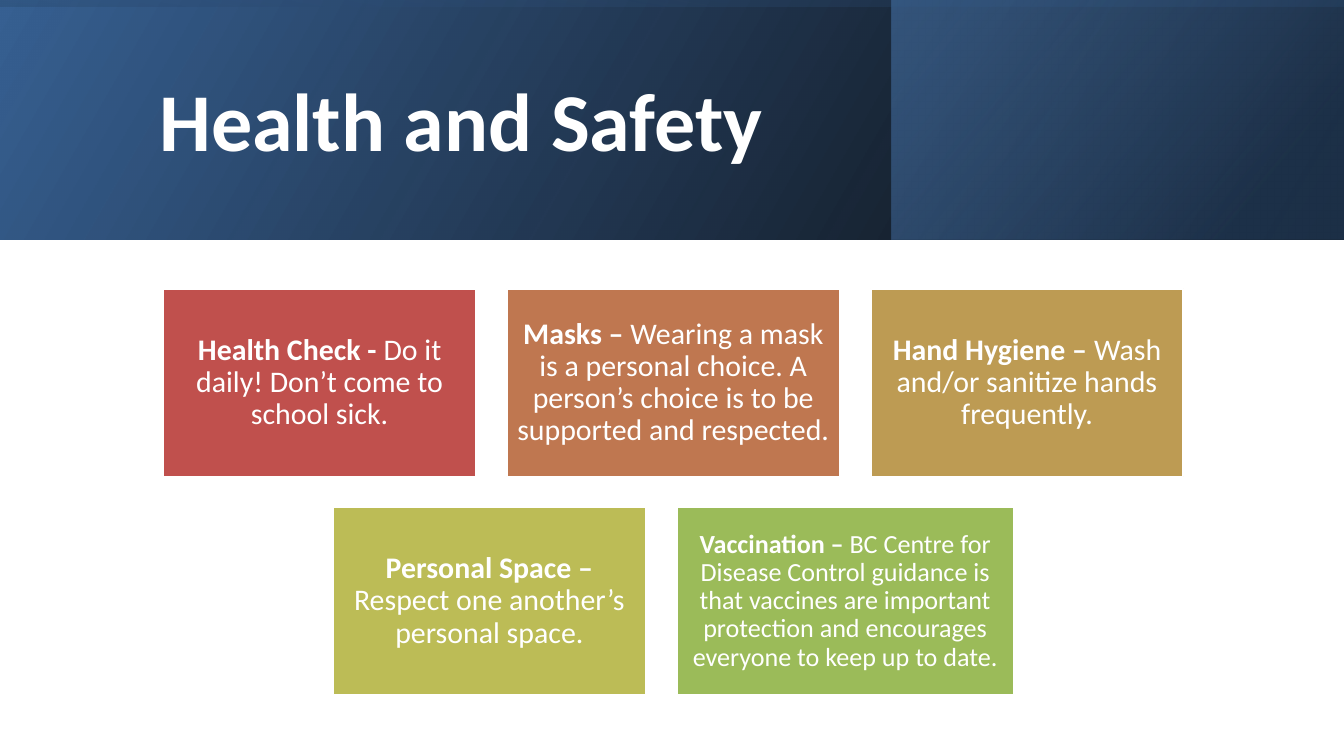
import lxml.etree
import pptx
import pptx.dml.color
import pptx.enum.shapes
import pptx.enum.text
import pptx.oxml.ns
import pptx.util
from dataclasses import dataclass

Pt = pptx.util.Pt
qn = pptx.oxml.ns.qn
RECTANGLE = pptx.enum.shapes.MSO_SHAPE.RECTANGLE
MIDDLE = pptx.enum.text.MSO_ANCHOR.MIDDLE
ALIGN = pptx.enum.text.PP_ALIGN


@dataclass(frozen=True)
class Theme:
    font: str = "Calibri"
    white: str = "FFFFFF"
    title_size: int = 88
    card_size: int = 32
    small_card_size: int = 28
    line_spacing: float = 0.9


THEME = Theme()

TITLE = "Health and Safety"
# heading, detail, fill, width, text size, inset
CARD_ROWS = [
    [
        ("Health Check - ", "Do it daily! Don’t come to school sick.",
         "C0504D", 335, THEME.card_size, 9.6),
        ("Masks – ", "Wearing a mask is a personal choice. A person’s choice "
         "is to be supported and respected.",
         "BF7750", 357, THEME.card_size, 9.6),
        ("Hand Hygiene – ", "Wash and/or sanitize hands frequently.",
         "BD9B53", 335, THEME.card_size, 9.6),
    ],
    [
        ("Personal Space – ", "Respect one another’s personal space.",
         "BCBC56", 335, THEME.card_size, 9.6),
        ("Vaccination – ", "BC Centre for Disease Control guidance is that "
         "vaccines are important protection and encourages everyone to keep "
         "up to date.",
         "9BBB59", 361, THEME.small_card_size, 8.5),
    ],
]
# box, rotation, clockwise gradient angle, stops of (position, colour, opacity %)
HEADER_BANDS = [
    ((0, 0, 1440, 256.5), 0, 330, [(0, "000000", 96), (1, "376092", 100)]),
    ((955, 0, 484, 256.5), 0, 320, [(0.19, "254061", 68), (1, "4F81BD", 48)]),
    ((591.75, -591.75, 256.5, 1440), 270, 350,
     [(0.23, "376092", 16), (0.99, "000000", 45)]),
]
TITLE_BOX = (163.5, 41, 1148, 186.5)
CARDS_CENTRE, CARDS_TOP, CARD_HEIGHT, GAP = 721.5, 309.6, 201, 33


def rgb(value):
    return pptx.dml.color.RGBColor.from_string(value)


def add_rectangle(slide, box):
    rectangle = slide.shapes.add_shape(RECTANGLE, *map(Pt, box))
    rectangle.shadow.inherit = False
    return rectangle


def add_band(slide, box, rotation, angle, stops):
    """Add a mirrored rectangle with a translucent gradient."""
    band = add_rectangle(slide, box)
    band.rotation = rotation
    band.line.fill.background()
    properties = band.element.spPr
    properties.find(qn("a:xfrm")).set("flipH", "1")
    band.fill.gradient()
    band.fill.gradient_angle = 360 - angle
    for stop, (position, colour, _) in zip(band.fill.gradient_stops, stops):
        stop.position = position
        stop.color.rgb = rgb(colour)
    colours = properties.iterfind(".//" + qn("a:gs") + "/" + qn("a:srgbClr"))
    for element, (_, _, opacity) in zip(colours, stops):
        alpha = lxml.etree.SubElement(element, qn("a:alpha"))
        alpha.set("val", str(opacity * 1000))


def style_paragraph(paragraph, size, alignment):
    paragraph.alignment = alignment
    paragraph.line_spacing = THEME.line_spacing
    paragraph.space_before = Pt(0)
    paragraph.font.name = THEME.font
    paragraph.font.size = Pt(size)
    paragraph.font.color.rgb = rgb(THEME.white)


def add_title(slide):
    title = slide.shapes.title
    title.left, title.top, title.width, title.height = map(Pt, TITLE_BOX)
    slide.shapes._spTree.append(title.element)  # in front of the bands
    title.text_frame.text = TITLE
    title.text_frame.vertical_anchor = MIDDLE
    paragraph = title.text_frame.paragraphs[0]
    style_paragraph(paragraph, THEME.title_size, ALIGN.LEFT)
    paragraph.font.bold = True
    paragraph.space_after = Pt(6)


def add_card(slide, box, heading, detail, colour, size, inset):
    card = add_rectangle(slide, box)
    card.fill.solid()
    card.fill.fore_color.rgb = rgb(colour)
    card.line.color.rgb = rgb(THEME.white)
    card.line.width = Pt(2)
    frame = card.text_frame
    frame.word_wrap = True
    frame.vertical_anchor = MIDDLE
    frame.margin_left = frame.margin_right = Pt(inset)
    frame.margin_top = frame.margin_bottom = Pt(inset)
    paragraph = frame.paragraphs[0]
    style_paragraph(paragraph, size, ALIGN.CENTER)
    for text, bold in ((heading, True), (detail, False)):
        run = paragraph.add_run()
        run.text = text
        run.font.bold = bold


def main():
    deck = pptx.Presentation()
    deck.slide_width, deck.slide_height = Pt(1440), Pt(810)
    slide = deck.slides.add_slide(deck.slide_layouts[5])

    for band in HEADER_BANDS:
        add_band(slide, *band)
    add_title(slide)

    for row, cards in enumerate(CARD_ROWS):
        row_width = sum(card[3] for card in cards) + GAP * (len(cards) - 1)
        left = CARDS_CENTRE - row_width / 2
        top = CARDS_TOP + row * (CARD_HEIGHT + GAP)
        for heading, detail, colour, width, size, inset in cards:
            add_card(slide, (left, top, width, CARD_HEIGHT),
                     heading, detail, colour, size, inset)
            left += width + GAP

    deck.save("out.pptx")


if __name__ == "__main__":
    main()
